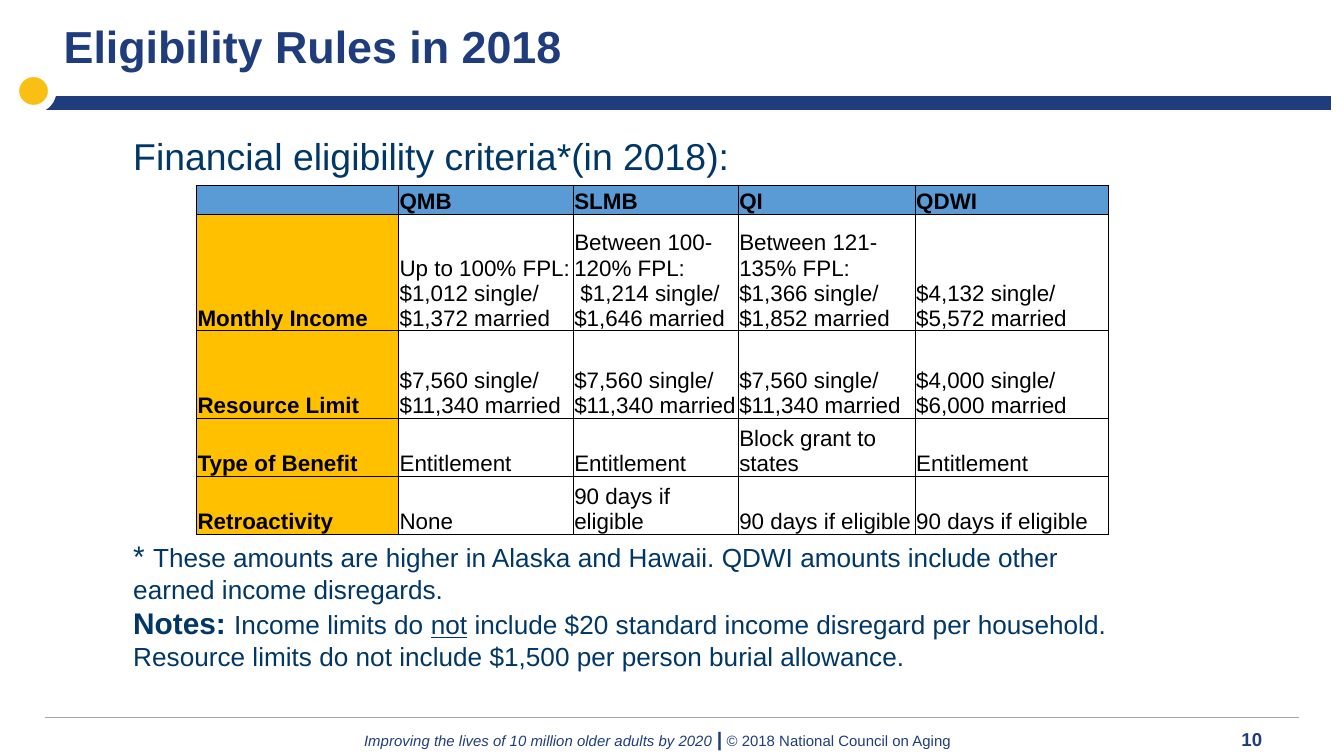
from lxml import etree
from pptx import Presentation
from pptx.dml.color import RGBColor
from pptx.enum.shapes import MSO_CONNECTOR, MSO_SHAPE
from pptx.enum.text import MSO_ANCHOR
from pptx.oxml.ns import qn
from pptx.util import Pt

RECT, OVAL = MSO_SHAPE.RECTANGLE, MSO_SHAPE.OVAL
STRAIGHT = MSO_CONNECTOR.STRAIGHT
BOTTOM = MSO_ANCHOR.BOTTOM

NAVY = RGBColor(0x1F, 0x3D, 0x7C)
INK = RGBColor(0x00, 0x37, 0x67)
GOLD = RGBColor(0xF9, 0xBF, 0x12)
AMBER = RGBColor(0xFF, 0xC0, 0x00)
BLUE = RGBColor(0x5B, 0x9B, 0xD5)
GRAY = RGBColor(0xA6, 0xA6, 0xA6)
BLACK = RGBColor(0x00, 0x00, 0x00)
WHITE = RGBColor(0xFF, 0xFF, 0xFF)


class Slide:
    font = "Arial"

    def __init__(self, s):
        self.s = s

    def format(self, r, size, color, bold=False, italic=False, underline=False):
        f = r.font
        f.name, f.size = self.font, Pt(size)
        f.bold, f.italic, f.underline = bold, italic, underline
        f.color.rgb = color

    def text(self, x, y, w, h, color, paragraphs, tab=None):
        tf = self.s.shapes.add_textbox(Pt(x), Pt(y), Pt(w), Pt(h)).text_frame
        tf.word_wrap = True
        for i, (gap, runs) in enumerate(paragraphs):
            p = tf.add_paragraph() if i else tf.paragraphs[0]
            p.space_before = Pt(gap)
            if tab:
                tabs = etree.SubElement(p._p.get_or_add_pPr(), qn("a:tabLst"))
                etree.SubElement(tabs, qn("a:tab"), pos=str(Pt(tab)), algn="l")
            for text, size, style in runs:
                r = p.add_run()
                r.text = text
                self.format(r, size, color, **style)

    def shape(self, kind, x, y, w, h, fill, line_width):
        sp = self.s.shapes.add_shape(kind, Pt(x), Pt(y), Pt(w), Pt(h))
        sp.shadow.inherit = False
        sp.fill.solid()
        sp.fill.fore_color.rgb = fill
        sp.line.color.rgb = WHITE
        sp.line.width = Pt(line_width)

    def line(self, x1, y1, x2, y2, color, width):
        c = self.s.shapes.add_connector(STRAIGHT, Pt(x1), Pt(y1), Pt(x2), Pt(y2))
        c.line.color.rgb = color
        c.line.width = Pt(width)
        etree.SubElement(c._element.spPr, qn("a:effectLst"))

    def borders(self, cell, color, width):
        tcPr = cell._tc.get_or_add_tcPr()
        for i, side in enumerate(("a:lnL", "a:lnR", "a:lnT", "a:lnB")):
            ln = etree.Element(qn(side), w=str(Pt(width)))
            fill = etree.SubElement(ln, qn("a:solidFill"))
            etree.SubElement(fill, qn("a:srgbClr"), val=str(color))
            tcPr.insert(i, ln)

    def table(self, x, y, widths, heights, rows, size):
        frame = self.s.shapes.add_table(len(rows), len(widths), Pt(x), Pt(y),
                                        Pt(sum(widths)), Pt(sum(heights)))
        t = frame.table
        for column, w in zip(t.columns, widths):
            column.width = Pt(w)
        for row, h in zip(t.rows, heights):
            row.height = Pt(h)
        for i, row in enumerate(rows):
            for j, text in enumerate(row):
                cell = t.cell(i, j)
                cell.margin_left = cell.margin_right = cell.margin_top = Pt(0.5)
                cell.margin_bottom = Pt(0)
                cell.vertical_anchor = BOTTOM
                cell.fill.solid()
                cell.fill.fore_color.rgb = BLUE if i == 0 else AMBER if j == 0 else WHITE
                self.borders(cell, BLACK, 0.5)
                cell.text_frame.text = text
                for p in cell.text_frame.paragraphs:
                    for r in p.runs:
                        self.format(r, size, BLACK, bold=i == 0 or j == 0)
                    etree.SubElement(p._p, qn("a:endParaRPr"), sz=str(size * 100))


BOLD = {"bold": True}
ITALIC = {"italic": True}
UNDERLINE = {"underline": True}

LIMIT = "$7,560 single/ $11,340 married"
RETROACTIVE = "90 days if eligible"
RULES = [
    ["", "QMB", "SLMB", "QI", "QDWI"],
    ["Monthly Income",
     "Up to 100% FPL:\n$1,012 single/ $1,372 married",
     "Between 100-120% FPL:\n $1,214 single/ $1,646 married",
     "Between 121-135% FPL:\n$1,366 single/ $1,852 married",
     "$4,132 single/\n$5,572 married"],
    ["Resource Limit", LIMIT, LIMIT, LIMIT, "$4,000 single/ $6,000 married"],
    ["Type of Benefit", "Entitlement", "Entitlement", "Block grant to states", "Entitlement"],
    ["Retroactivity", "None", RETROACTIVE, RETROACTIVE, RETROACTIVE],
]
TITLE = [(0, [("Eligibility Rules in 2018", 24, BOLD)])]
CRITERIA = [
    (0, [("Financial eligibility criteria*(in 2018):", 20, {})]),
    (192.5, [("* ", 16, {}),
             ("These amounts are higher in Alaska and Hawaii. QDWI amounts include "
              "other earned income disregards.", 14, {})]),
    (0, [("Notes: ", 16, BOLD),
         ("Income limits do ", 14, {}),
         ("not", 14, UNDERLINE),
         (" include $20 standard income disregard per household. Resource limits do "
          "not include $1,500 per person burial allowance.", 14, {})]),
]
FOOTER = [
    (0, [("Improving the lives of 10 million older adults by 2020 ", 8, ITALIC),
         ("|", 10.5, BOLD),
         (" © 2018 National Council on Aging\t", 8, {}),
         ("10", 10, BOLD)]),
]


def main():
    prs = Presentation()
    prs.slide_width, prs.slide_height = Pt(720), Pt(405)
    slide = Slide(prs.slides.add_slide(prs.slide_layouts[6]))
    slide.text(188, 386, 518, 19, NAVY, FOOTER, tab=470)
    slide.line(24, 384.5, 696, 384.5, GRAY, 0.5)
    slide.shape(RECT, 12, 50.5, 702, 9.5, NAVY, 2)
    slide.shape(OVAL, 8, 39, 20, 19.5, GOLD, 4.5)
    slide.text(27, 6.5, 685, 49, NAVY, TITLE)
    slide.text(64.3, 68, 552, 298, INK, CRITERIA)
    slide.table(105.4, 99.3, [108.2, 93.6, 88.4, 94.8, 103.4],
                [15.6, 62.4, 47, 31, 31], RULES, 12)
    prs.save("out.pptx")


if __name__ == "__main__":
    main()
